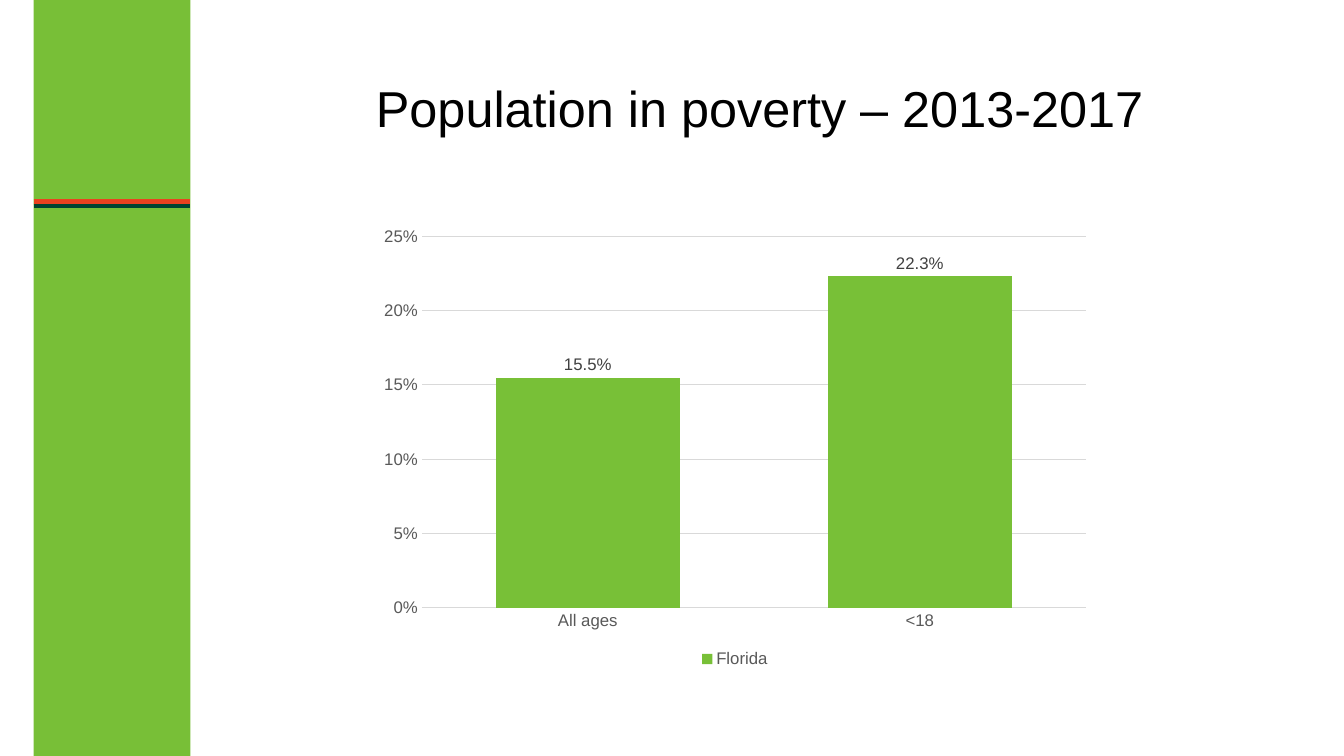
from dataclasses import dataclass

import pptx
import pptx.chart.data
import pptx.dml.color
import pptx.enum.chart
import pptx.enum.shapes
import pptx.enum.text
import pptx.oxml
import pptx.util
from pptx.util import Pt


@dataclass(frozen=True)
class Theme:
    font: str = "Arial"
    title_size: float = 36
    chart_size: float = 12
    band: str = "78BF37"
    bar: str = "78C037"
    red: str = "EA421F"
    dark_green: str = "004531"
    title: str = "000000"
    axis_text: str = "595959"
    value_text: str = "404040"
    grid: str = "D9D9D9"


def rgb(color):
    return pptx.dml.color.RGBColor.from_string(color)


def format_font(font, name, size, color):
    font.name = name
    font.size = Pt(size)
    font.color.rgb = rgb(color)
    font.bold = False


def write_text(frame, text, *, font, size, color, align, anchor):
    frame.word_wrap = True
    frame.auto_size = pptx.enum.text.MSO_AUTO_SIZE.NONE
    frame.vertical_anchor = anchor
    para = frame.paragraphs[0]
    para.alignment = align
    span = para.add_run()
    span.text = text
    format_font(span.font, font, size, color)


class PageBuilder:
    """Adds styled elements to one page; all lengths are in points."""

    def __init__(self, page, theme):
        self.page = page
        self.theme = theme

    def title(self, text, left, top, width, height):
        box = self.page.shapes.title
        box.left, box.top, box.width, box.height = map(Pt, (left, top, width, height))
        frame = box.text_frame
        frame.margin_left = frame.margin_right = Pt(4.5)
        frame.margin_top = frame.margin_bottom = Pt(7)
        write_text(frame, text, font=self.theme.font, size=self.theme.title_size,
                   color=self.theme.title, align=pptx.enum.text.PP_ALIGN.LEFT,
                   anchor=pptx.enum.text.MSO_ANCHOR.TOP)

    def rectangle(self, left, top, width, height, color):
        shape = self.page.shapes.add_shape(
            pptx.enum.shapes.MSO_SHAPE.RECTANGLE, *map(Pt, (left, top, width, height)))
        shape.shadow.inherit = False
        shape.fill.solid()
        shape.fill.fore_color.rgb = rgb(color)
        shape.line.fill.background()

    def horizontal_line(self, left, right, y, color, weight):
        line = self.page.shapes.add_connector(
            pptx.enum.shapes.MSO_CONNECTOR.STRAIGHT, Pt(left), Pt(y), Pt(right), Pt(y))
        line.line.color.rgb = rgb(color)
        line.line.width = Pt(weight)
        properties = line._element.spPr
        properties.append(properties.makeelement(pptx.oxml.ns.qn("a:effectLst"), {}))

    def chart_font(self, font, color):
        format_font(font, self.theme.font, self.theme.chart_size, color)

    def grid_line(self, line):
        line.color.rgb = rgb(self.theme.grid)
        line.width = Pt(0.75)

    def column_chart(self, left, top, width, height, categories, name, values):
        data = pptx.chart.data.CategoryChartData(number_format="0.0%")
        data.categories = categories
        data.add_series(name, values)
        chart = self.page.shapes.add_chart(
            pptx.enum.chart.XL_CHART_TYPE.COLUMN_CLUSTERED,
            *map(Pt, (left, top, width, height)), data).chart
        self.chart_font(chart.font, self.theme.axis_text)
        chart.has_title = False
        chart.has_legend = True
        chart.legend.position = pptx.enum.chart.XL_LEGEND_POSITION.BOTTOM
        chart.legend.include_in_layout = False
        self.chart_font(chart.legend.font, self.theme.axis_text)

        for axis in (chart.category_axis, chart.value_axis):
            axis.major_tick_mark = axis.minor_tick_mark = pptx.enum.chart.XL_TICK_MARK.NONE
            self.chart_font(axis.tick_labels.font, self.theme.axis_text)
        self.grid_line(chart.category_axis.format.line)
        value_axis = chart.value_axis
        value_axis.minimum_scale, value_axis.maximum_scale = 0, 0.25
        value_axis.major_unit = 0.05
        value_axis.tick_labels.number_format = "0%"
        value_axis.tick_labels.number_format_is_linked = False
        value_axis.format.line.fill.background()
        self.grid_line(value_axis.major_gridlines.format.line)

        plot = chart.plots[0]
        plot.gap_width, plot.overlap = 80, -27
        plot.vary_by_categories = False
        series = plot.series[0]
        series.format.fill.solid()
        series.format.fill.fore_color.rgb = rgb(self.theme.bar)
        labels = series.data_labels
        labels.show_value = True
        labels.number_format = "0.0%"
        labels.number_format_is_linked = False
        labels.position = pptx.enum.chart.XL_LABEL_POSITION.OUTSIDE_END
        self.chart_font(labels.font, self.theme.value_text)


def main():
    theme = Theme()
    deck = pptx.Presentation()
    deck.slide_width, deck.slide_height = Pt(960), Pt(540)
    title_only = deck.slide_layouts.get_by_name("Title Only")
    builder = PageBuilder(deck.slides.add_slide(title_only), theme)

    band_left, band_width = 24, 112
    builder.rectangle(band_left, 0, band_width, 540, theme.band)
    for y, color in ((144, theme.red), (147, theme.dark_green)):
        builder.horizontal_line(band_left, band_left + band_width, y, color, 3)

    content_left = 264
    builder.title("Population in poverty – 2013-2017", content_left, 48, 564, 90)
    builder.column_chart(content_left, 156, 522, 324,
                         ("All ages", "<18"), "Florida", (0.155, 0.223))
    deck.save("out.pptx")


if __name__ == "__main__":
    main()
